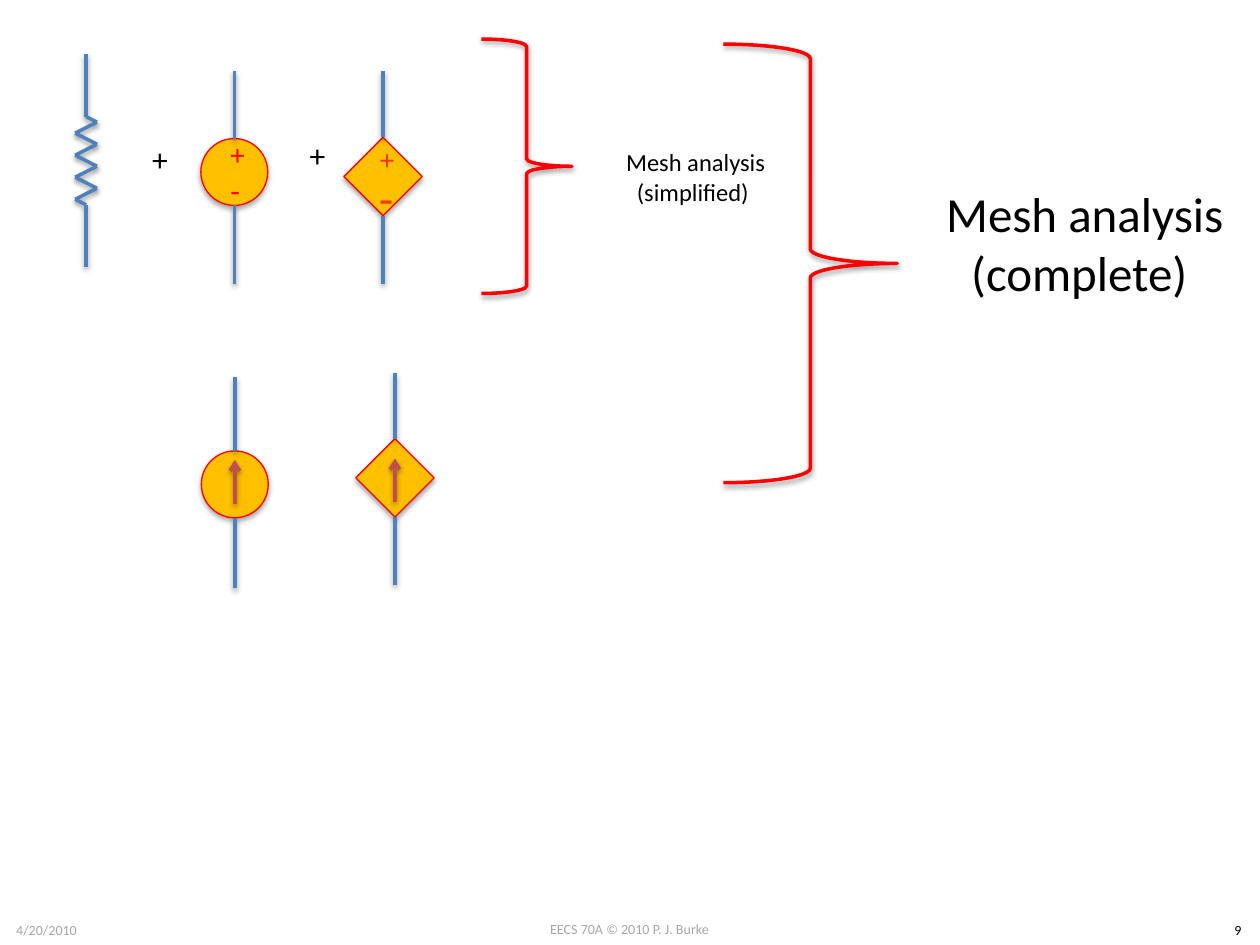
from dataclasses import dataclass
from itertools import pairwise

from lxml.etree import SubElement
from pptx import Presentation
from pptx.dml.color import RGBColor
from pptx.enum.shapes import MSO_CONNECTOR, MSO_SHAPE as Preset
from pptx.enum.text import MSO_ANCHOR as Anchor, MSO_AUTO_SIZE as AutoSize, PP_ALIGN as Align
from pptx.oxml.ns import qn
from pptx.util import Pt

WIRE, ARROW, BODY, RED, ORANGE_RED = "4F81BD", "C0504D", "FFC000", "FF0000", "FF3300"
BLACK, GREY = "000000", "A6A6A6"


@dataclass
class Sign:
    text: str
    top: float
    size: float
    font: str
    color: str
    bold: bool = False


@dataclass
class Source:
    """A circle or rotated square on a vertical wire, all in points."""
    preset: Preset
    center_x: float
    center_y: float
    side: float
    rotation: float
    wire_top: float
    wire_bottom: float
    signs: tuple[Sign, ...] = ()
    arrow: tuple[float, float] | None = None

    @property
    def half_height(self) -> float:
        return self.side / 2 * (2 ** 0.5 if self.rotation else 1)


def rgb(color: str) -> RGBColor:
    return RGBColor.from_string(color)


def add_shadow(shape, alpha: int, distance: float) -> None:
    effects = SubElement(shape._element.spPr, qn("a:effectLst"))
    shadow = SubElement(effects, qn("a:outerShdw"), blurRad=str(Pt(3.1)),
                        dist=str(Pt(distance)), dir="5400000", rotWithShape="0")
    black = SubElement(shadow, qn("a:srgbClr"), val=BLACK)
    SubElement(black, qn("a:alpha"), val=str(alpha * 1000))


def add_line(shapes, start: tuple[float, float], end: tuple[float, float],
             color: str = WIRE, arrow: bool = False) -> None:
    line = shapes.add_connector(MSO_CONNECTOR.STRAIGHT, *map(Pt, (*start, *end)))
    line.line.color.rgb = rgb(color)
    line.line.width = Pt(2)
    if arrow:
        SubElement(line.line._get_or_add_ln(), qn("a:tailEnd"), type="arrow")
    add_shadow(line, 38, 1.6)


def add_text(shapes, text: str, left: float, top: float, width: float, height: float, *,
             size: float, font: str = "Calibri", color: str = BLACK, bold: bool = False,
             align: Align = Align.CENTER, anchor: Anchor = Anchor.TOP,
             wrap: bool = True, grow: bool = True) -> None:
    frame = shapes.add_textbox(*map(Pt, (left, top, width, height))).text_frame
    frame.text = text
    frame.word_wrap = wrap
    frame.vertical_anchor = anchor
    frame.auto_size = AutoSize.SHAPE_TO_FIT_TEXT if grow else AutoSize.NONE
    for paragraph in frame.paragraphs:
        paragraph.alignment = align
        for run in paragraph.runs:
            run.font.size, run.font.name, run.font.bold = Pt(size), font, bold
            run.font.color.rgb = rgb(color)


def add_brace(shapes, left: float, top: float, width: float, height: float) -> None:
    brace = shapes.add_shape(Preset.LEFT_BRACE, *map(Pt, (left, top, width, height)))
    brace.rotation = 180
    brace.fill.background()
    brace.line.color.rgb = rgb(RED)
    brace.line.width = Pt(2)
    add_shadow(brace, 38, 1.6)


def add_resistor(shapes, x: float, top: float, bottom: float) -> None:
    swing, first_y, step, turns = 6.2, 69.8, 6.3, 8
    zigzag = [(x + (-swing if i % 2 else swing), first_y + step * i) for i in range(turns)]
    coil_end = zigzag[-1][1] + step / 2
    points = [(x, top), (x, first_y - step / 2), *zigzag, (x, coil_end), (x, bottom)]
    group = shapes.add_group_shape().shapes
    for start, end in pairwise(points):
        add_line(group, start, end)


def add_source(shapes, source: Source) -> None:
    group = shapes.add_group_shape().shapes
    x, y, side = source.center_x, source.center_y, source.side
    body = group.add_shape(source.preset, Pt(x - side / 2), Pt(y - side / 2), Pt(side), Pt(side))
    body.rotation = source.rotation
    body.fill.solid()
    body.fill.fore_color.rgb = rgb(BODY)
    body.line.color.rgb = rgb(RED)
    body.line.width = Pt(0.75)
    add_shadow(body, 35, 1.8)
    for sign in source.signs:
        add_text(group, sign.text, x - 9.4, sign.top, 18.8, 23.8, size=sign.size,
                 font=sign.font, color=sign.color, bold=sign.bold,
                 anchor=Anchor.MIDDLE, grow=False)
    add_line(group, (x, y - source.half_height), (x, source.wire_top))
    add_line(group, (x, y + source.half_height), (x, source.wire_bottom))
    if source.arrow:
        tail, tip = source.arrow
        add_line(group, (x, tail), (x, tip), ARROW, arrow=True)


CIRCLE, SQUARE, SERIF = 38.2, 31.7, "Times New Roman"
SOURCES = (
    # Voltage sources: independent, then dependent
    Source(Preset.OVAL, 133.9, 98.3, CIRCLE, 0, 40.4, 162,
           signs=(Sign("+", 76.3, 16.6, "Calibri", RED), Sign("-", 96.5, 18, "Calibri", RED))),
    Source(Preset.RECTANGLE, 218.9, 100.9, SQUARE, 45, 40.4, 162,
           signs=(Sign("+", 79.2, 16, SERIF, ORANGE_RED, True),
                  Sign("-", 100.1, 24, SERIF, ORANGE_RED))),
    # Current sources: independent, then dependent
    Source(Preset.OVAL, 134.2, 276.8, CIRCLE, 0, 215.2, 336.2, arrow=(288, 262.8)),
    Source(Preset.RECTANGLE, 225.7, 273.1, SQUARE, 45, 213.1, 334.1, arrow=(286.6, 262)),
)


def main() -> None:
    deck = Presentation()
    deck.slide_width, deck.slide_height = Pt(720), Pt(540)
    shapes = deck.slides.add_slide(deck.slide_layouts[6]).shapes

    # Footer
    add_text(shapes, "EECS 70A © 2010 P. J. Burke", 275.8, 522.5, 168, 17, size=8, color=GREY)
    add_text(shapes, "4/20/2010", 0, 523.2, 53.3, 17, size=8, color=GREY)
    add_text(shapes, "9", 694.8, 523.2, 25.2, 17, size=8)

    # Circuit elements and the plus signs between them
    add_resistor(shapes, 49.2, 31, 152.6)
    for source in SOURCES:
        add_source(shapes, source)
    for left, top in ((79.9, 76.3), (169.9, 74.2)):
        add_text(shapes, "+", left, top, 23.8, 28.8, size=18, align=Align.LEFT, wrap=False)

    # Braces and the methods they lead to
    add_brace(shapes, 275, 22.3, 51.8, 145.4)
    add_text(shapes, " Mesh analysis\n(simplified)", 347, 80.6, 97.9, 41, size=14, wrap=False)
    add_brace(shapes, 413.3, 25.2, 99.4, 250.6)
    add_text(shapes, " Mesh analysis\n(complete)", 521.3, 101.5, 190.8, 74.9, size=28)

    deck.save("out.pptx")


if __name__ == "__main__":
    main()
